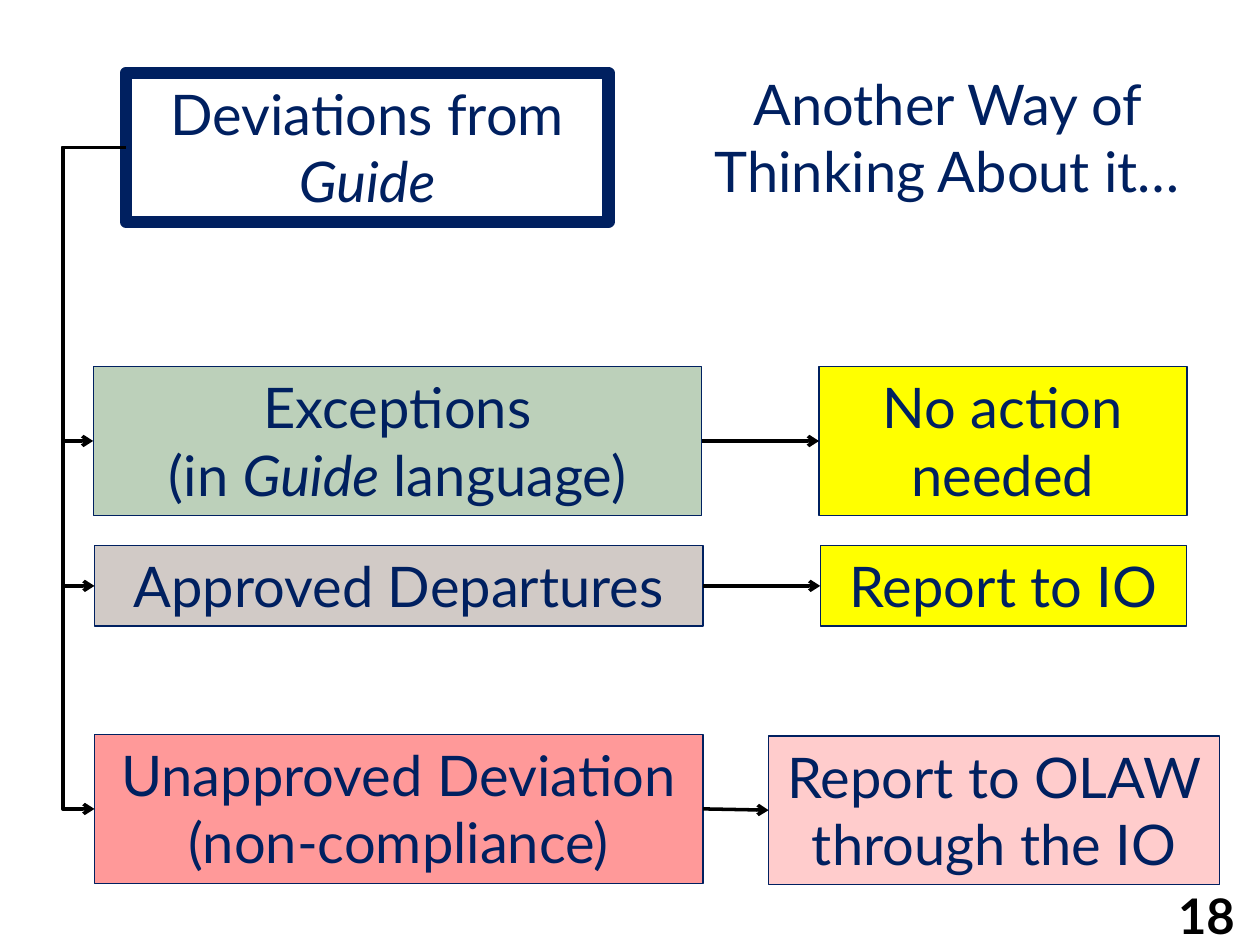
from pptx import Presentation
from pptx.dml.color import RGBColor
from pptx.enum.shapes import MSO_CONNECTOR, MSO_SHAPE
from pptx.enum.text import MSO_ANCHOR, MSO_AUTO_SIZE, PP_ALIGN
from pptx.oxml.ns import qn
from pptx.util import Inches, Pt
from lxml.etree import SubElement

NAVY = RGBColor(0x00, 0x20, 0x60)
BLACK = RGBColor(0x00, 0x00, 0x00)
GREEN = RGBColor(0xBC, 0xD0, 0xBA)
GREY = RGBColor(0xD1, 0xCA, 0xC6)
RED = RGBColor(0xFF, 0x99, 0x99)
YELLOW = RGBColor(0xFF, 0xFF, 0x00)
PINK = RGBColor(0xFF, 0xCC, 0xCC)
FONT = "Lato"
ITALIC_WORD = "Guide"
TRUNK_X = 0.5

ROWS = [
    ((0.74, 2.91, 4.83, 1.18), ["Exceptions", "(in Guide language)"], GREEN,
     (6.5, 2.91, 2.92, 1.18), ["No action needed"], YELLOW),
    ((0.75, 4.33, 4.83, 0.64), ["Approved Departures"], GREY,
     (6.51, 4.33, 2.91, 0.64), ["Report to IO"], YELLOW),
    ((0.75, 5.83, 4.83, 1.18), ["Unapproved Deviation (non-compliance)"], RED,
     (6.1, 5.84, 3.58, 1.18), ["Report to OLAW through the IO"], PINK),
]


def style_paragraph(p, size=32, color=NAVY, bold=False):
    p.alignment = PP_ALIGN.CENTER
    p.font.name = FONT
    p.font.size = Pt(size)
    p.font.bold = bold
    p.font.color.rgb = color


def add_runs(p, text):
    before, word, after = text.partition(ITALIC_WORD)
    for part in filter(None, (before, word, after)):
        r = p.add_run()
        r.text = part
        if part == ITALIC_WORD:
            r.font.italic = True


def add_box(s, box, lines, fill=None, line_width=0.75):
    sp = s.shapes.add_shape(MSO_SHAPE.RECTANGLE, *map(Inches, box))
    sp.shadow.inherit = False
    if fill is None:
        sp.fill.background()
    else:
        sp.fill.solid()
        sp.fill.fore_color.rgb = fill
    sp.line.color.rgb = NAVY
    sp.line.width = Pt(line_width)
    tf = sp.text_frame
    tf.word_wrap = True
    tf.auto_size = MSO_AUTO_SIZE.SHAPE_TO_FIT_TEXT
    tf.vertical_anchor = MSO_ANCHOR.TOP
    for i, text in enumerate(lines):
        p = tf.add_paragraph() if i else tf.paragraphs[0]
        style_paragraph(p)
        add_runs(p, text)


def left_middle(box):
    return box[0], box[1] + box[3] / 2


def right_middle(box):
    return box[0] + box[2], box[1] + box[3] / 2


def add_arrow(s, start, end, kind=MSO_CONNECTOR.STRAIGHT):
    cx = s.shapes.add_connector(kind, *map(Inches, start + end))
    cx.line.color.rgb = BLACK
    cx.line.width = Pt(2)
    SubElement(cx.line._get_or_add_ln(), qn("a:tailEnd"), type="arrow")
    SubElement(cx._element.spPr, qn("a:effectLst"))
    return cx


def add_branch(s, start, end):
    cx = add_arrow(s, start, end, MSO_CONNECTOR.ELBOW)
    bend = (start[0] - TRUNK_X) / (start[0] - end[0])
    guides = cx._element.spPr.find(qn("a:prstGeom")).get_or_add_avLst()
    SubElement(guides, qn("a:gd"), name="adj1", fmla=f"val {round(bend * 100000)}")


def add_title(s, box):
    sp = s.shapes.title
    sp.left, sp.top, sp.width, sp.height = map(Inches, box)
    tf = sp.text_frame
    tf.text = "Another Way of Thinking About it…"
    tf.word_wrap = True
    tf.auto_size = MSO_AUTO_SIZE.NONE
    tf.vertical_anchor = MSO_ANCHOR.BOTTOM
    style_paragraph(tf.paragraphs[0])


def add_decision_tree(s, root):
    add_box(s, root, ["Deviations from Guide"], line_width=7)
    for case, case_text, case_fill, action, action_text, action_fill in ROWS:
        add_box(s, case, case_text, case_fill)
        add_box(s, action, action_text, action_fill)
        add_branch(s, left_middle(root), left_middle(case))
        add_arrow(s, right_middle(case), left_middle(action))


def add_page_number(s, box):
    tf = s.shapes.add_textbox(*map(Inches, box)).text_frame
    tf.word_wrap = True
    tf.vertical_anchor = MSO_ANCHOR.MIDDLE
    tf.margin_left = tf.margin_right = tf.margin_top = tf.margin_bottom = Inches(0.05)
    p = tf.paragraphs[0]
    p.text = "18"
    style_paragraph(p, 28, BLACK, True)


def main():
    prs = Presentation()
    prs.slide_width, prs.slide_height = Inches(10), Inches(7.5)
    s = prs.slides.add_slide(prs.slide_layouts[5])
    add_title(s, (5.25, 0.84, 4.54, 0.83))
    add_decision_tree(s, (1, 0.58, 3.83, 1.18))
    add_page_number(s, (9.17, 7.02, 0.81, 0.48))
    prs.save("out.pptx")


if __name__ == "__main__":
    main()
